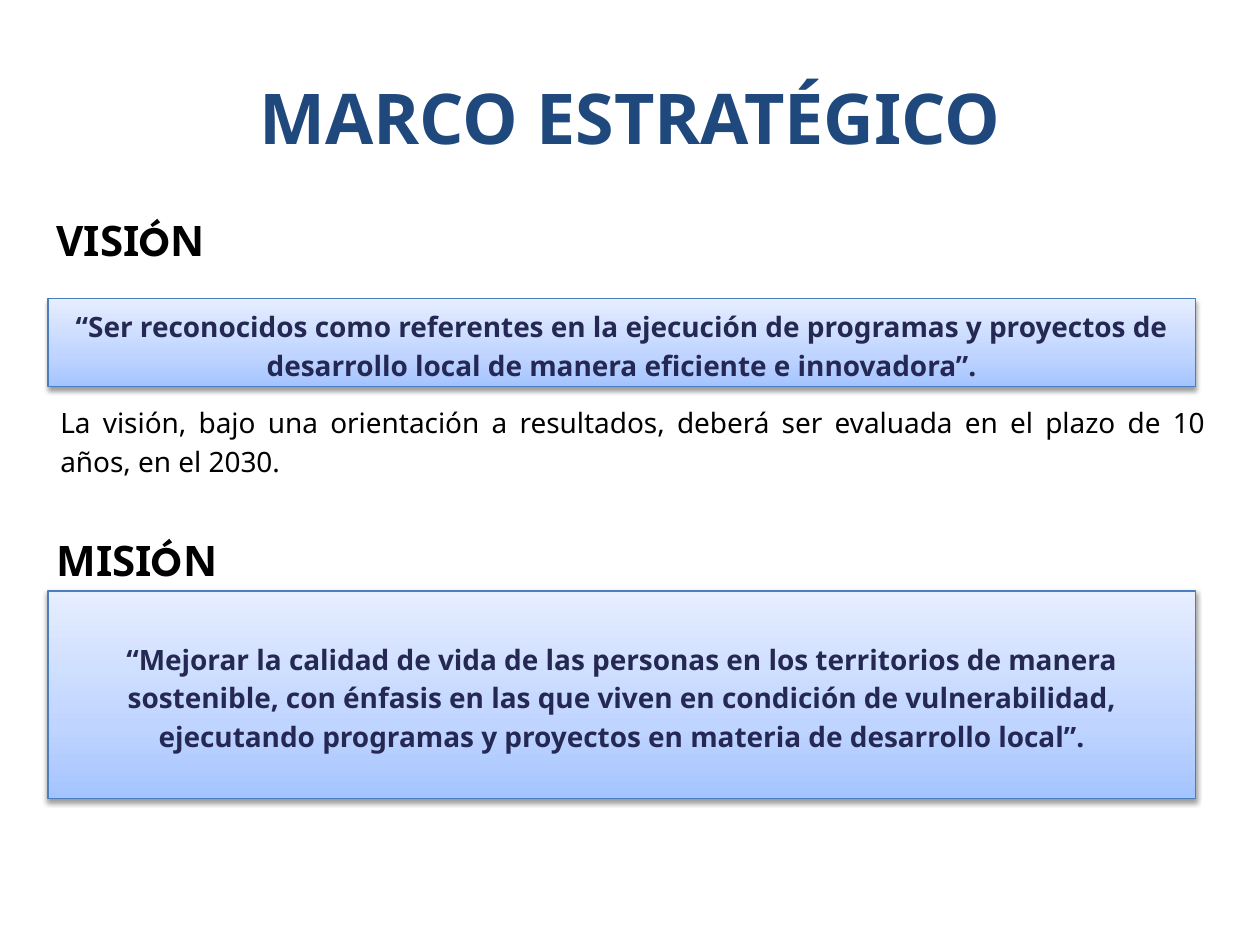
import lxml.etree
import pptx
import pptx.dml.color
import pptx.enum.shapes
import pptx.enum.text
import pptx.oxml
import pptx.oxml.ns
import pptx.util

Inches = pptx.util.Inches
Pt = pptx.util.Pt
ALIGN = pptx.enum.text.PP_ALIGN
ANCHOR = pptx.enum.text.MSO_ANCHOR

COLOURS = {
    "title": "1F497D", "text": "000000", "quote": "242852",
    "border": "4B7EBC", "shadow": "000000",
}
GRADIENT = {0: "A4C4FF", 35: "BFD4FF", 100: "E6EEFF"}  # bottom to top
FONT = "Noto Sans"
ACCENT_FONT = "League Spartan"
BODY = {"line_spacing": 1.15, "space_after": Pt(10)}


def rgb(name):
    return pptx.dml.color.RGBColor.from_string(COLOURS[name])


def apply(target, values):
    for name, value in values.items():
        setattr(target, name, value)


def write(shape, runs, size, colour, bold, anchor, layout):
    """Fill a shape with one paragraph made of (text, font) runs."""
    frame = shape.text_frame
    apply(frame, {"word_wrap": True, "vertical_anchor": anchor})
    paragraph = frame.paragraphs[0]
    apply(paragraph, layout)
    for text, font in runs:
        run = paragraph.add_run()
        run.text = text
        apply(run.font, {"name": font, "size": Pt(size), "bold": bold})
        run.font.color.rgb = rgb(colour)


def add_text(slide, box, *format_values):
    shape = slide.shapes.add_textbox(*map(Inches, box))
    write(shape, *format_values)


def add_title(slide, box):
    add_text(slide, box, [("MARCO ESTRATÉGICO", FONT)], 40, "title", True,
             ANCHOR.MIDDLE, {"alignment": ALIGN.CENTER})


def add_heading(slide, box, start):
    runs = [(start, FONT), ("Ó", ACCENT_FONT), ("N", FONT)]
    add_text(slide, box, runs, 24, "text", True, ANCHOR.MIDDLE,
             {"alignment": ALIGN.LEFT})


def add_note(slide, box, text):
    add_text(slide, box, [(text, FONT)], 16, "text", False, ANCHOR.TOP,
             {"alignment": ALIGN.JUSTIFY, **BODY})


def set_gradient(shape):
    shape.fill.gradient()
    shape.fill.gradient_angle = 90
    stops = shape.fill.gradient_stops
    stop_list = shape._element.spPr.find(".//" + pptx.oxml.ns.qn("a:gsLst"))
    for _ in range(len(stops)):
        stop_list.remove(stop_list[0])
    for position, colour in GRADIENT.items():
        stop_list.append(pptx.oxml.parse_xml(
            f'<a:gs {pptx.oxml.ns.nsdecls("a")} pos="{position * 1000}">'
            f'<a:srgbClr val="{colour}"/></a:gs>'))


def set_shadow(shape):
    shape.shadow.inherit = False
    effects = shape._element.spPr.find(pptx.oxml.ns.qn("a:effectLst"))
    effects.append(pptx.oxml.parse_xml(
        f'<a:outerShdw {pptx.oxml.ns.nsdecls("a")} blurRad="{Pt(3.1)}" '
        f'dist="{Pt(1.6)}" dir="5400000" rotWithShape="0">'
        f'<a:srgbClr val="{COLOURS["shadow"]}"><a:alpha val="38000"/>'
        '</a:srgbClr></a:outerShdw>'))


def add_quote(slide, box, text, anchor):
    shape = slide.shapes.add_shape(
        pptx.enum.shapes.MSO_SHAPE.RECTANGLE, *map(Inches, box))
    set_gradient(shape)
    shape.line.color.rgb = rgb("border")
    shape.line.width = Pt(0.75)
    set_shadow(shape)
    write(shape, [(text, FONT)], 16, "quote", True, anchor,
          {"alignment": ALIGN.CENTER, **BODY})


def main():
    presentation = pptx.Presentation()
    apply(presentation, {"slide_width": Inches(10), "slide_height": Inches(7.5)})
    slide = presentation.slides.add_slide(presentation.slide_layouts[6])

    add_title(slide, (0.5, 0.3, 9, 1.25))

    # Vision
    add_heading(slide, (0.35, 1.65, 2.76, 0.5), "VISI")
    add_quote(slide, (0.38, 2.37, 9.11, 0.7),
              "“Ser reconocidos como referentes en la ejecución de programas y "
              "proyectos de desarrollo local de manera eficiente e innovadora”.",
              ANCHOR.TOP)
    add_note(slide, (0.38, 3.13, 9.29, 0.7),
             "La visión, bajo una orientación a resultados, deberá ser evaluada "
             "en el plazo de 10 años, en el 2030.")

    # Mission
    add_heading(slide, (0.35, 4.19, 2.76, 0.5), "MISI")
    add_quote(slide, (0.38, 4.69, 9.11, 1.65),
              "“Mejorar la calidad de vida de las personas en los territorios de "
              "manera sostenible, con énfasis en las que viven en condición de "
              "vulnerabilidad, ejecutando programas y proyectos en materia de "
              "desarrollo local”.",
              ANCHOR.MIDDLE)

    presentation.save("out.pptx")


if __name__ == "__main__":
    main()
